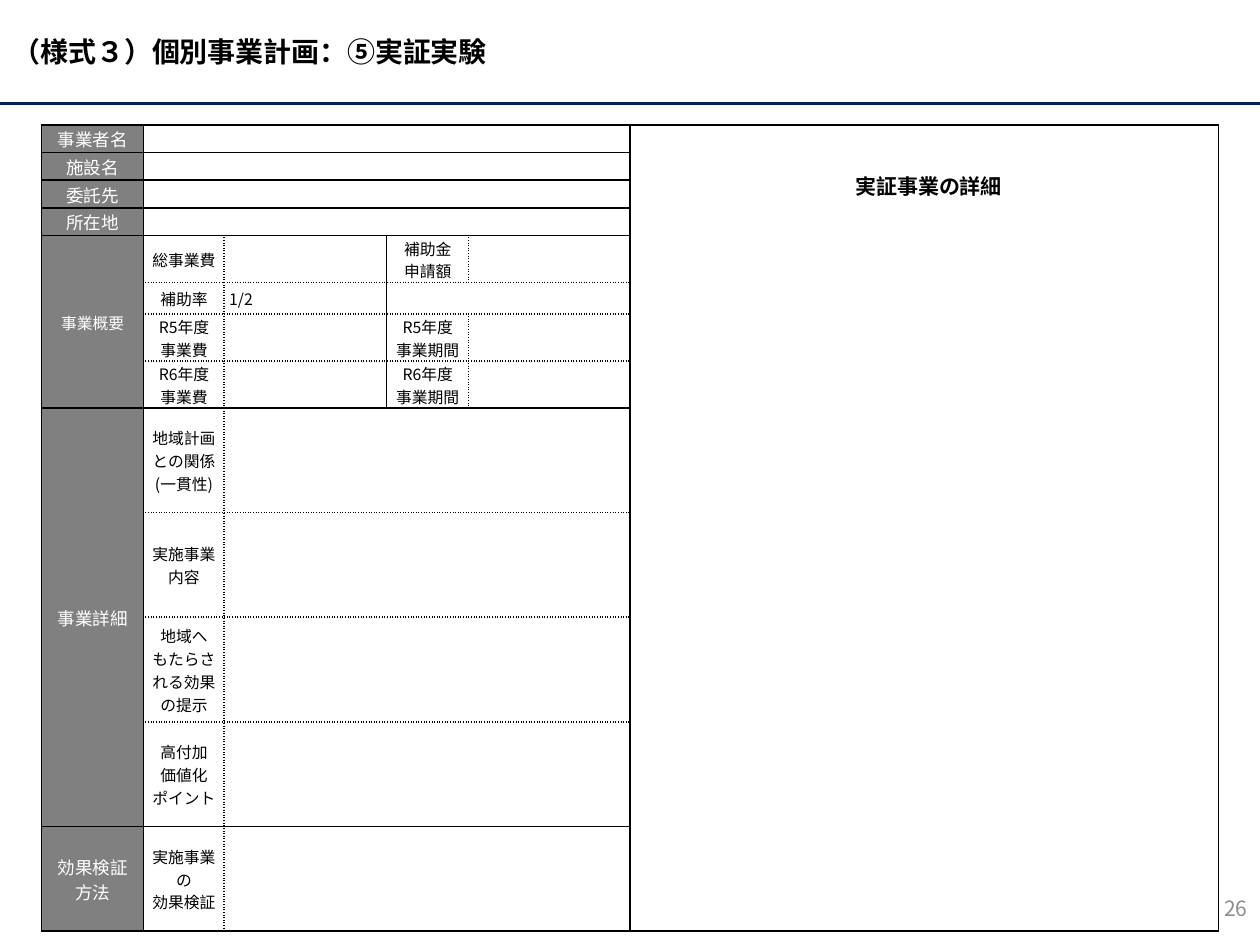
import itertools
import dataclasses
import pptx
import pptx.util
import pptx.dml.color
import pptx.enum.text
import pptx.enum.shapes
import pptx.oxml
import pptx.oxml.ns

Inch = pptx.util.Inches
Align = pptx.enum.text.PP_ALIGN
Mid = pptx.enum.text.MSO_ANCHOR.MIDDLE


@dataclasses.dataclass(frozen=True)
class Theme:
    """Colours, font and type sizes of the form."""
    font: str = "Noto Sans CJK JP"
    ink: str = "000000"
    paper: str = "FFFFFF"
    head: str = "808080"
    rule: str = "002060"
    page: str = "8C8C8C"
    title: int = 16
    sub: int = 12
    label: int = 10
    body: int = 9


THEME = Theme()
WIDE, HIGH = 10, 7.5
COLS = [0.81, 0.64, 1.29, 0.65, 1.28, 4.67]
ROWS = [0.22] * 4 + [0.31, 0.25, 0.31, 0.31] + [0.83] * 5
MERGES = ([(row, 1, 1, 4) for row in range(4)]
          + [(row, 2, 1, 3) for row in range(8, 13)]
          + [(4, 0, 4, 1), (8, 0, 4, 1), (5, 3, 1, 2), (0, 5, 13, 1)])
HEADS = {0: "事業者名", 1: "施設名", 2: "委託先", 3: "所在地",
         4: "事業概要", 8: "事業詳細", 12: "効果検証\v方法"}
ITEMS = {
    (4, 1): "総事業費", (4, 3): "補助金\n申請額",
    (5, 1): "補助率", (5, 2): "1/2",
    (6, 1): "R5年度\n事業費", (6, 3): "R5年度\n事業期間",
    (7, 1): "R6年度\n事業費", (7, 3): "R6年度\v事業期間",
    (8, 1): "地域計画との関係(一貫性)", (9, 1): "実施事業内容",
    (10, 1): "地域へ\nもたらされる効果の提示",
    (11, 1): "高付加\n価値化\nポイント", (12, 1): "実施事業の\v効果検証",
}
DOT_ROWS = {5, 6, 7, 9, 10, 11}
DOT_COLS = {2, 4}


def paint(color):
    """Return a colour object for a hex string."""
    return pptx.dml.color.RGBColor.from_string(color)


def add_xml(root, text):
    """Append a drawing element written as XML to a parent."""
    space = pptx.oxml.ns.nsdecls("a")
    root.append(pptx.oxml.parse_xml(text.replace(">", f" {space}>", 1)))


def write(frame, text, size, color, align, bold=False):
    """Fill a text frame and format its paragraphs and runs."""
    frame.text = text
    for para in frame.paragraphs:
        para.alignment = align
        for run in para.runs:
            font = run.font
            font.name, font.size, font.bold = THEME.font, pptx.util.Pt(size), bold
            font.color.rgb = paint(color)
            add_xml(run._r.get_or_add_rPr(), f'<a:ea typeface="{THEME.font}"></a:ea>')
        if not para.runs:
            add_xml(para._p, f'<a:endParaRPr sz="{size * 100}"></a:endParaRPr>')


def edge(cell, side, dotted):
    """Draw one border of a cell, dotted or solid."""
    dash = "sysDot" if dotted else "solid"
    add_xml(cell._tc.get_or_add_tcPr(),
            f'<a:ln{side} w="12700"><a:solidFill><a:srgbClr val="{THEME.ink}"/>'
            f'</a:solidFill><a:prstDash val="{dash}"/></a:ln{side}>')


def frame_cell(cell, row, col, tall, span):
    """Draw the four borders that suit a cell's place in the grid."""
    inner = 0 < col < 5
    edge(cell, "L", row > 3 and col in DOT_COLS)
    edge(cell, "R", row > 3 and col + span in DOT_COLS)
    edge(cell, "T", inner and row in DOT_ROWS)
    edge(cell, "B", inner and row + tall in DOT_ROWS)


def fill_cell(cell, row, col):
    """Set the text, margins and fill of a cell."""
    tight = col == 0 or (row, col) == (4, 3)
    cell.margin_left = cell.margin_right = Inch(0.01 if tight else 0.04)
    cell.margin_top, cell.margin_bottom = Inch(0.01), 0
    cell.vertical_anchor = Mid
    if col == 0:
        size = THEME.body if row == 4 else THEME.label
        write(cell.text_frame, HEADS.get(row, ""), size, THEME.paper, Align.CENTER)
    else:
        align = Align.LEFT if col == 2 else Align.CENTER
        write(cell.text_frame, ITEMS.get((row, col), ""), THEME.body, THEME.ink, align)
    if col in (0, 5):
        cell.fill.solid()
        cell.fill.fore_color.rgb = paint(THEME.head if col == 0 else THEME.paper)
    else:
        cell.fill.background()


def add_form(slide, box):
    """Build the plan form as a table in the box."""
    grid = slide.shapes.add_table(len(ROWS), len(COLS), *map(Inch, box)).table
    grid.first_row = grid.horz_banding = False
    for part, size in zip(grid.columns, COLS):
        part.width = Inch(size)
    for part, size in zip(grid.rows, ROWS):
        part.height = Inch(size)
    for row, col, tall, span in MERGES:
        grid.cell(row, col).merge(grid.cell(row + tall - 1, col + span - 1))
    for row, col in itertools.product(range(len(ROWS)), range(len(COLS))):
        cell = grid.cell(row, col)
        if cell.is_spanned:
            continue
        tall, span = (cell.span_height, cell.span_width) if cell.is_merge_origin else (1, 1)
        for down, over in itertools.product(range(tall), range(span)):
            part = grid.cell(row + down, col + over)
            frame_cell(part, row, col, tall, span)
            fill_cell(part, row + down, col + over)


def add_head(slide, box):
    """Place the title in the box with a rule along its foot."""
    left, top, width, height = map(Inch, box)
    title = slide.shapes.title
    title.left, title.top, title.width, title.height = left, top, width, height
    write(title.text_frame, "（様式３）個別事業計画：⑤実証実験",
          THEME.title, THEME.ink, Align.LEFT, True)
    title.text_frame.vertical_anchor = Mid
    foot = top + height
    rule = slide.shapes.add_connector(
        pptx.enum.shapes.MSO_CONNECTOR.STRAIGHT, left, foot, left + width, foot)
    rule.line.color.rgb = paint(THEME.rule)
    rule.line.width = pptx.util.Pt(1.5)
    add_xml(rule._element.spPr, "<a:effectLst></a:effectLst>")


def add_note(slide, box, text, color, align, bold=False):
    """Place one line of text in the box."""
    frame = slide.shapes.add_textbox(*map(Inch, box)).text_frame
    frame.word_wrap = True
    frame.vertical_anchor = Mid
    write(frame, text, THEME.sub, color, align, bold)


def main():
    """Build and save the slide."""
    deck = pptx.Presentation()
    deck.slide_width, deck.slide_height = Inch(WIDE), Inch(HIGH)
    slide = deck.slides.add_slide(deck.slide_layouts[5])
    add_head(slide, (0, 0, WIDE, 0.82))
    add_form(slide, (0.33, 0.99, sum(COLS), sum(ROWS)))
    add_note(slide, (0.775 * WIDE, 7.01, 0.225 * WIDE, 0.4), "26", THEME.page, Align.RIGHT)
    add_note(slide, (5.24, 1.4, 4.26, 0.16), "実証事業の詳細", THEME.ink, Align.CENTER, True)
    deck.save("out.pptx")


if __name__ == "__main__":
    main()
